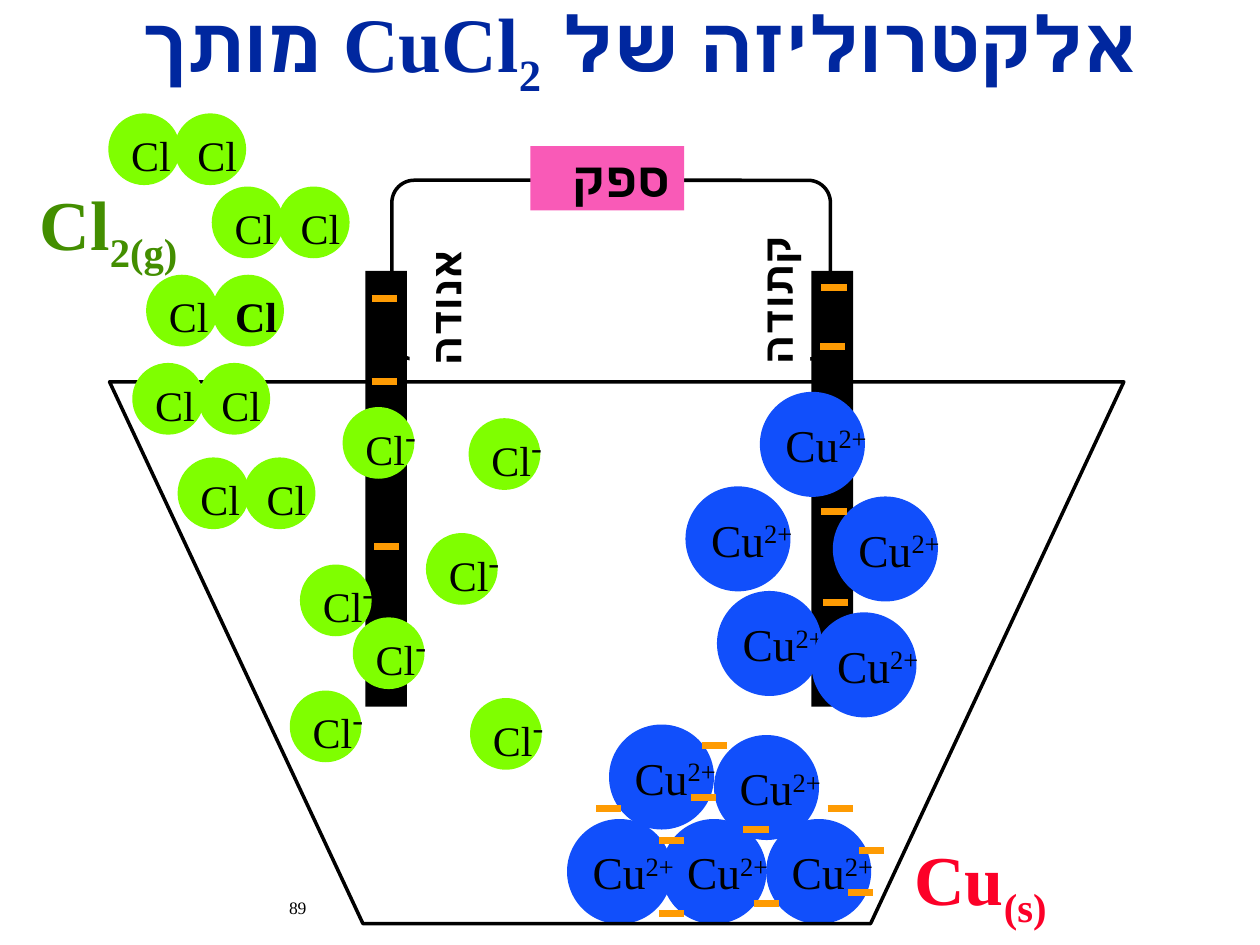
from pptx import Presentation
from pptx.dml.color import RGBColor
from pptx.enum.shapes import MSO_CONNECTOR, MSO_SHAPE
from pptx.enum.text import MSO_ANCHOR, PP_ALIGN
from pptx.oxml.ns import qn
from pptx.util import Pt
from lxml import etree

OVAL, RECTANGLE, ROUNDED = MSO_SHAPE.OVAL, MSO_SHAPE.RECTANGLE, MSO_SHAPE.ROUNDED_RECTANGLE
STRAIGHT = MSO_CONNECTOR.STRAIGHT
TOP, MIDDLE = MSO_ANCHOR.TOP, MSO_ANCHOR.MIDDLE
LEFT, CENTER, RIGHT = PP_ALIGN.LEFT, PP_ALIGN.CENTER, PP_ALIGN.RIGHT

FONT = "Times New Roman"
BLACK, WHITE = "000000", "FFFFFF"
GREEN, BLUE, ORANGE, PINK = "7FFF00", "114FFB", "FE9B03", "F95AB7"
CHLORINE_SIZE, COPPER_SIZE = 41, 60
BOND, DASH = 37.8, 14.4

WIRE = (223.9, 103, 250.6, 102.2)
WIRE_COVER = (234, 195.1, 229, 14.4)
ELECTRODES = [(208.8, 154.8, 23.8, 249.1), (463.7, 154.8, 23.8, 249.1)]
SUPPLY = (303.1, 83.5, 87.8, 36.7)
VESSEL = [(62.6, 218.2), (207.4, 527.8), (497.5, 527.8), (642.2, 218.2)]
COPPER_IONS = [
    (391.7, 277.9), (409.7, 337.7), (434.2, 223.9), (463.7, 349.9), (475.9, 283.7),
    (378, 468), (437.8, 468), (324, 468), (408, 420), (348, 414),
]
CHLORIDE_IONS = [
    (268.6, 398.9), (243.4, 304.6), (165.6, 394.6), (171.4, 322.6),
    (267.8, 239), (201.6, 352.8), (195.8, 232.6),
]
MOLECULES = [
    (61.9, 64.8, False), (101.5, 261.4, False), (121, 106.6, False),
    (83.5, 157, True), (75.6, 207.4, False),
]
ELECTRONS = [
    (401, 426.2), (340.6, 462.2), (424.8, 473.8), (376.6, 480.2), (376.6, 522),
    (430.6, 516.2), (484.6, 509.8), (394.6, 455.8), (473, 462.2), (491, 486),
    (470.2, 344.2), (469.4, 292.3), (212.4, 218.2), (213.8, 312.5),
    (212.4, 170.6), (469.4, 164.2), (468.7, 198),
]
LABELS = [
    {"box": (515.5, 473.8, 119.5, 54.7), "runs": [("Cu", 40, 0), ("(s)", 40, -25)], "color": "FC0128"},
    {"box": (15.8, 99.4, 119.5, 54.7), "runs": [("Cl", 40, 0), ("2(g)", 40, -25)], "color": "438E00"},
    {"box": (392.4, 146.2, 102.2, 36), "runs": [("קתודה", 24, 0)], "rotation": 270},
    {"box": (208.8, 152.6, 90.7, 36), "runs": [("אנודה", 24, 0)], "rotation": 270},
    {"box": (139.7, 509, 42.5, 19.4), "runs": [("89", 10, 0)], "bold": False, "align": RIGHT},
    {
        "box": (59.8, 7.9, 612, 90),
        "runs": [("אלקטרוליזה של CuCl", 44, 0), ("2", 44, -25), (" מותך", 44, 0)],
        "color": "00279F", "align": CENTER, "anchor": MIDDLE,
        "margins": (7.2, 0, 7.2, 51), "rtl": True,
    },
]


def rgb(color):
    return RGBColor.from_string(color)


def style(shape, fill=None, line=None):
    shape.shadow.inherit = False
    if fill:
        shape.fill.solid()
        shape.fill.fore_color.rgb = rgb(fill)
    else:
        shape.fill.background()
    if line:
        shape.line.color.rgb = rgb(line)
        shape.line.width = Pt(2)
    else:
        shape.line.fill.background()
    return shape


def add_shape(slide, kind, box, fill=None, line=None):
    return style(slide.shapes.add_shape(kind, *map(Pt, box)), fill, line)


def write(shape, runs, color=BLACK, bold=False, align=LEFT, anchor=MIDDLE,
          margins=(7.2, 3.6, 7.2, 3.6), wrap=False, rtl=False):
    frame = shape.text_frame
    frame.word_wrap = wrap
    frame.vertical_anchor = anchor
    frame.margin_left, frame.margin_top, frame.margin_right, frame.margin_bottom = map(Pt, margins)
    paragraph = frame.paragraphs[0]
    paragraph.alignment = align
    paragraph.font.name = FONT
    paragraph.font.bold = bold
    paragraph.font.color.rgb = rgb(color)
    if rtl:
        paragraph._p.get_or_add_pPr().set("rtl", "1")
    for text, size, baseline in runs:
        run = paragraph.add_run()
        run.text = text
        font = run.font
        font.name, font.size, font.bold = FONT, Pt(size), bold
        font.color.rgb = rgb(color)
        if baseline:
            run._r.get_or_add_rPr().set("baseline", str(baseline * 1000))


def add_chlorine(slide, left, top, charge, bold=False):
    atom = add_shape(slide, OVAL, (left, top, CHLORINE_SIZE, CHLORINE_SIZE), GREEN)
    write(atom, [("Cl", 24, 0), (charge, 32, 30)], bold=bold)


def add_copper(slide, left, top):
    ion = add_shape(slide, OVAL, (left, top, COPPER_SIZE, COPPER_SIZE), BLUE)
    write(ion, [("Cu", 26, 0), ("2+", 26, 30)], margins=(5.8, 2.9, 5.8, 2.9))


def add_electron(slide, left, top):
    dash = slide.shapes.add_connector(STRAIGHT, Pt(left), Pt(top), Pt(left + DASH), Pt(top))
    dash.line.color.rgb = rgb(ORANGE)
    dash.line.width = Pt(4)
    etree.SubElement(dash._element.spPr, qn("a:effectLst"))


def add_label(slide, box, runs, rotation=0, bold=True, anchor=TOP, **options):
    label = slide.shapes.add_textbox(*map(Pt, box))
    label.rotation = rotation
    write(label, runs, bold=bold, anchor=anchor, wrap=True, **options)


def main():
    presentation = Presentation()
    presentation.slide_width, presentation.slide_height = Pt(720), Pt(540)
    slide = presentation.slides.add_slide(presentation.slide_layouts[6])

    wire = add_shape(slide, ROUNDED, WIRE, line=BLACK)
    wire.adjustments[0] = 0.125
    add_shape(slide, RECTANGLE, WIRE_COVER, WHITE)
    for electrode in ELECTRODES:
        add_shape(slide, RECTANGLE, electrode, BLACK)
    supply = add_shape(slide, RECTANGLE, SUPPLY, PINK)
    write(supply, [("ספק", 28, 0)], bold=True, margins=(24, 3.6, 7.2, 3.6))

    for left, top in COPPER_IONS:
        add_copper(slide, left, top)
    corners = [(Pt(x), Pt(y)) for x, y in VESSEL]
    builder = slide.shapes.build_freeform(*corners[0])
    builder.add_line_segments(corners[1:], close=True)
    style(builder.convert_to_shape(), line=BLACK)

    for left, top in CHLORIDE_IONS:
        add_chlorine(slide, left, top, "-")
    for left, top, bold in MOLECULES:
        add_chlorine(slide, left, top, " ")
        add_chlorine(slide, left + BOND, top, " ", bold)
    for left, top in ELECTRONS:
        add_electron(slide, left, top)
    for label in LABELS:
        add_label(slide, **label)

    presentation.save("out.pptx")


if __name__ == "__main__":
    main()
